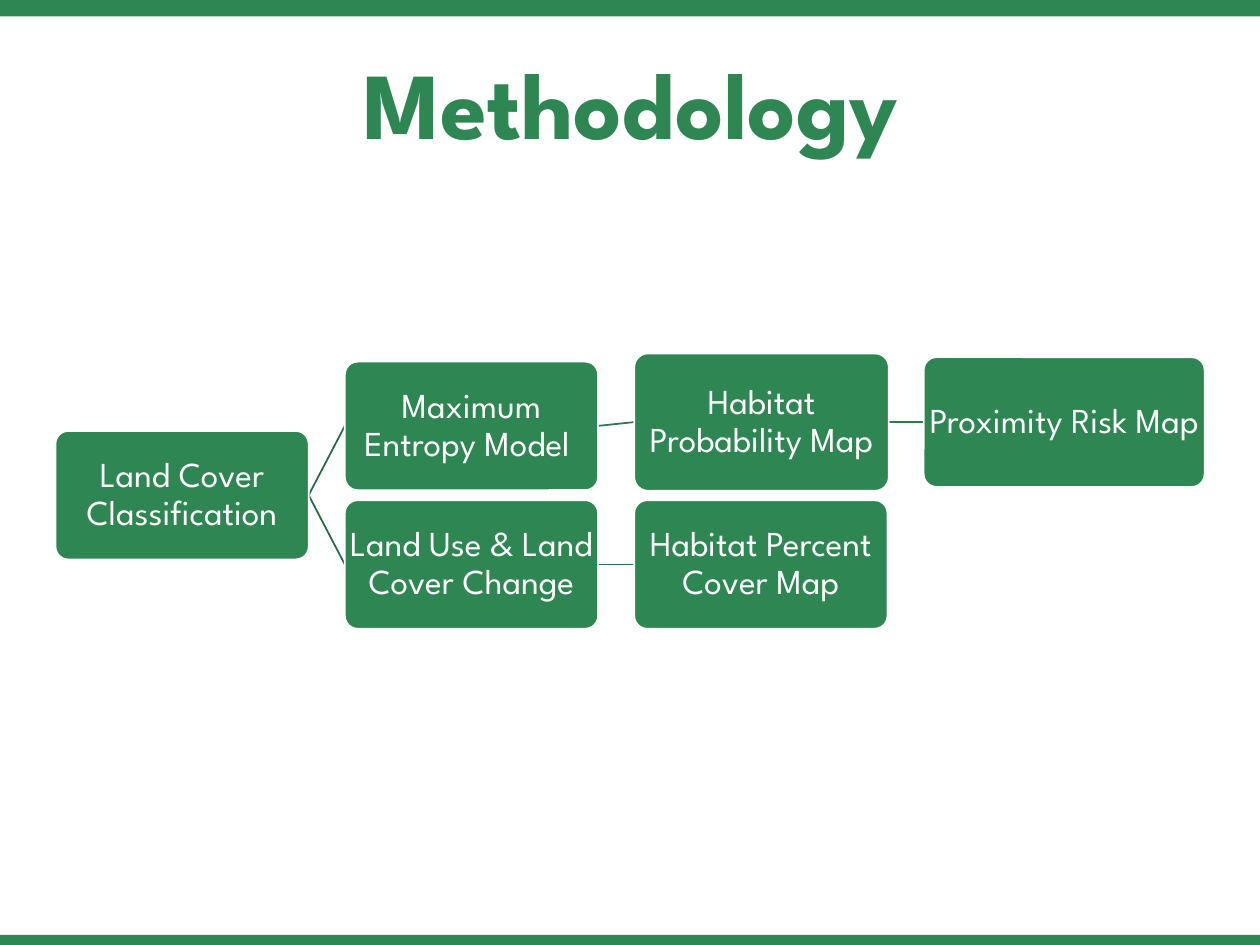
from lxml import etree
from pptx import Presentation
from pptx.dml.color import RGBColor
from pptx.enum.shapes import MSO_CONNECTOR, MSO_SHAPE
from pptx.enum.text import MSO_ANCHOR, PP_ALIGN
from pptx.oxml.ns import qn
from pptx.util import Inches, Pt

RECTANGLE, ROUNDED = MSO_SHAPE.RECTANGLE, MSO_SHAPE.ROUNDED_RECTANGLE
STRAIGHT = MSO_CONNECTOR.STRAIGHT
TOP, MIDDLE = MSO_ANCHOR.TOP, MSO_ANCHOR.MIDDLE
CENTER = PP_ALIGN.CENTER

FONT = "League Spartan"
GREEN, WHITE = "2E8652", "FFFFFF"
BRANCH_GREEN, LINK_GREEN = "256B42", "2A7A4A"
SLIDE_WIDTH, SLIDE_HEIGHT = 10, 7.5
BANDS = [(0, 0.13), (7.42, 0.08)]
TITLE = "Methodology"

FIRST_LEFT, COLUMN_STEP = 0.44, 2.297
STEPS = {
    "classification": ("Land Cover Classification", 0, 3.93, 2.01, 1.02),
    "entropy": ("Maximum Entropy Model ", 1, 3.38, 2.01, 1.02),
    "probability": ("Habitat Probability Map", 2, 3.35, 2.02, 1.09),
    "risk": ("Proximity Risk Map", 3, 3.35, 2.23, 1.03),
    "change": ("Land Use & Land Cover Change", 1, 4.48, 2.01, 1.02),
    "percent": ("Habitat Percent Cover Map", 2, 4.48, 2.01, 1.02),
}
LINKS = [
    ("classification", "entropy", BRANCH_GREEN),
    ("classification", "change", BRANCH_GREEN),
    ("entropy", "probability", LINK_GREEN),
    ("probability", "risk", LINK_GREEN),
    ("change", "percent", LINK_GREEN),
]


def color(value):
    return RGBColor.from_string(value)


def write_text(shape, text, size, fill, bold=False, anchor=MIDDLE, inset=0.01):
    frame = shape.text_frame
    frame.word_wrap = True
    frame.vertical_anchor = anchor
    frame.margin_left = frame.margin_right = Inches(inset)
    frame.margin_top = frame.margin_bottom = Inches(min(inset, 0.05))
    paragraph = frame.paragraphs[0]
    paragraph.alignment = CENTER
    paragraph.line_spacing = 0.9
    run = paragraph.add_run()
    run.text = text
    run.font.name = FONT
    run.font.size = Pt(size)
    run.font.bold = bold
    run.font.color.rgb = color(fill)


def add_box(slide, kind, left, top, width, height):
    shape = slide.shapes.add_shape(
        kind, Inches(left), Inches(top), Inches(width), Inches(height))
    shape.shadow.inherit = False
    shape.fill.solid()
    shape.fill.fore_color.rgb = color(GREEN)
    shape.line.fill.background()
    return shape


def add_step(slide, text, column, middle, width, height):
    left = FIRST_LEFT + column * COLUMN_STEP
    shape = add_box(slide, ROUNDED, left, middle - height / 2, width, height)
    shape.adjustments[0] = 0.1
    shape.line.color.rgb = color(WHITE)
    shape.line.width = Pt(1)
    write_text(shape, text, 20, WHITE)


def add_link(slide, source, target, line_color):
    _, column, start_y, width, _ = STEPS[source]
    _, target_column, end_y, _, _ = STEPS[target]
    start_x = FIRST_LEFT + column * COLUMN_STEP + width
    end_x = FIRST_LEFT + target_column * COLUMN_STEP
    connector = slide.shapes.add_connector(
        STRAIGHT, Inches(start_x), Inches(start_y), Inches(end_x), Inches(end_y))
    connector.line.color.rgb = color(line_color)
    connector.line.width = Pt(1)
    etree.SubElement(connector._element.spPr, qn("a:effectLst"))


def main():
    """Build the methodology flow slide."""
    presentation = Presentation()
    presentation.slide_width = Inches(SLIDE_WIDTH)
    presentation.slide_height = Inches(SLIDE_HEIGHT)
    slide = presentation.slides.add_slide(presentation.slide_layouts[6])
    for top, height in BANDS:
        add_box(slide, RECTANGLE, 0, top, SLIDE_WIDTH, height)
    title = slide.shapes.add_textbox(
        Inches(0.82), Inches(0.41), Inches(8.37), Inches(1.41))
    write_text(title, TITLE, 54, GREEN, bold=True, anchor=TOP, inset=0.1)
    for link in LINKS:
        add_link(slide, *link)
    for step in STEPS.values():
        add_step(slide, *step)
    presentation.save("out.pptx")


if __name__ == "__main__":
    main()
